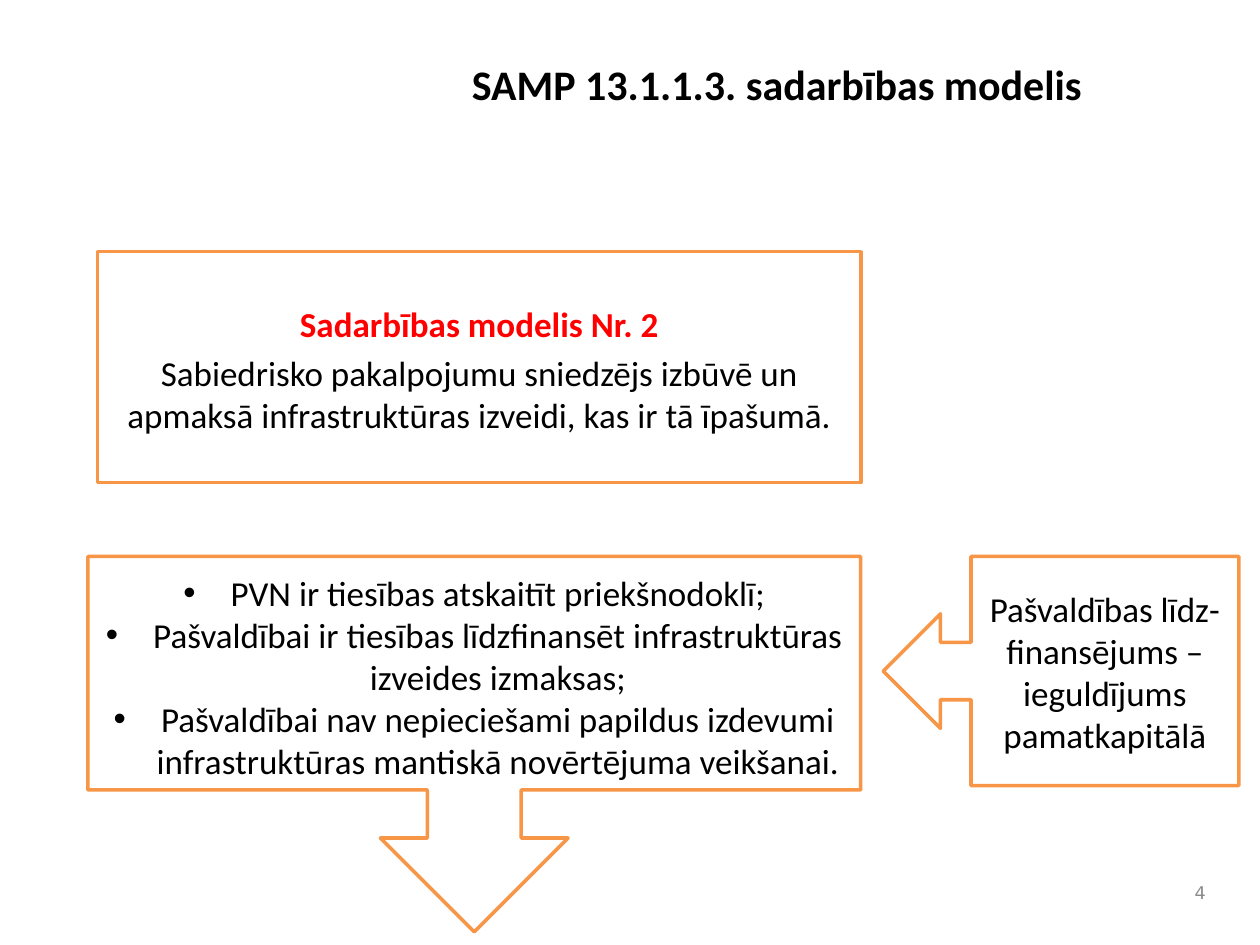
from lxml import etree
from pptx import Presentation
from pptx.dml.color import RGBColor
from pptx.enum.shapes import MSO_SHAPE
from pptx.enum.text import MSO_ANCHOR, PP_ALIGN
from pptx.oxml.ns import qn
from pptx.util import Pt

CENTER, RIGHT = PP_ALIGN.CENTER, PP_ALIGN.RIGHT
TOP, MIDDLE = MSO_ANCHOR.TOP, MSO_ANCHOR.MIDDLE
DOWN_CALLOUT = MSO_SHAPE.DOWN_ARROW_CALLOUT
LEFT_CALLOUT = MSO_SHAPE.LEFT_ARROW_CALLOUT

COLORS = {
    "text": "000000",
    "heading": "FF0000",
    "border": "F79646",
    "paper": "FFFFFF",
    "number": "898989",
}
BULLET_INDENT = 27


def rgb(name):
    return RGBColor.from_string(COLORS[name])


def set_frame(frame, anchor, top_inset=3.6):
    frame.word_wrap = True
    frame.vertical_anchor = anchor
    frame.margin_left = frame.margin_right = Pt(7.2)
    frame.margin_top, frame.margin_bottom = Pt(top_inset), Pt(3.6)


def set_border(shape):
    shape.line.color.rgb = rgb("border")
    shape.line.width = Pt(2)


def add_bullet(paragraph):
    properties = paragraph._p.get_or_add_pPr()
    properties.set("marL", str(Pt(BULLET_INDENT)))
    properties.set("indent", str(-Pt(BULLET_INDENT)))
    etree.SubElement(properties, qn("a:buFont")).set("typeface", "Arial")
    etree.SubElement(properties, qn("a:buChar")).set("char", "•")


def write(frame, lines, size=20, color="text", bold=False, align=CENTER,
          font="Calibri", bullets=False):
    """Write one paragraph per line, all in the same style."""
    frame.text = "\n".join(lines)
    for paragraph in frame.paragraphs:
        if bullets:
            add_bullet(paragraph)
        paragraph.alignment = align
        paragraph.font.name = font
        paragraph.font.size = Pt(size)
        paragraph.font.bold = bold
        paragraph.font.color.rgb = rgb(color)


def add_text(slide, box, lines, anchor=TOP, top_inset=3.6, **style):
    text_box = slide.shapes.add_textbox(*map(Pt, box))
    set_frame(text_box.text_frame, anchor, top_inset)
    write(text_box.text_frame, lines, **style)
    return text_box


def add_callout(slide, kind, box, body_share, lines, top_inset=3.6, **style):
    callout = slide.shapes.add_shape(kind, *map(Pt, box))
    callout.adjustments[3] = body_share
    callout.shadow.inherit = False
    callout.fill.solid()
    callout.fill.fore_color.rgb = rgb("paper")
    set_border(callout)
    set_frame(callout.text_frame, MIDDLE, top_inset)
    write(callout.text_frame, lines, **style)


def main():
    prs = Presentation()
    prs.slide_width, prs.slide_height = Pt(720), Pt(540)
    slide = prs.slides.add_slide(prs.slide_layouts[6])

    # Title and slide number
    add_text(slide, (204, 30, 480, 81), ["SAMP 13.1.1.3. sadarbības modelis"],
             size=24, bold=True)
    add_text(slide, (672, 498, 24, 24), ["4"], anchor=MIDDLE, size=10,
             color="number", align=RIGHT, font="DejaVu Sans")

    # Cooperation model
    model = add_text(slide, (55.8, 143.8, 436.2, 132), [
        "Sadarbības modelis Nr. 2",
        "Sabiedrisko pakalpojumu sniedzējs izbūvē un apmaksā "
        "infrastruktūras izveidi, kas ir tā īpašumā.",
    ], anchor=MIDDLE, top_inset=5.6)
    set_border(model)
    heading, description = model.text_frame.paragraphs
    heading.font.bold = True
    heading.font.color.rgb = rgb("heading")
    description.space_before = Pt(4)

    # Consequences of the model
    add_callout(slide, DOWN_CALLOUT, (50.2, 318, 441.6, 214.5), 0.622, [
        "PVN ir tiesības atskaitīt priekšnodoklī;",
        "Pašvaldībai ir tiesības līdzfinansēt infrastruktūras "
        "izveides izmaksas;",
        "Pašvaldībai nav nepieciešami papildus izdevumi "
        "infrastruktūras mantiskā novērtējuma veikšanai.",
    ], top_inset=7.4, bullets=True)

    # Municipal co-financing
    add_callout(slide, LEFT_CALLOUT, (504.7, 318, 203.2, 131), 0.753, [
        "Pašvaldības līdz- finansējums – ieguldījums pamatkapitālā",
    ])

    prs.save("out.pptx")


if __name__ == "__main__":
    main()
